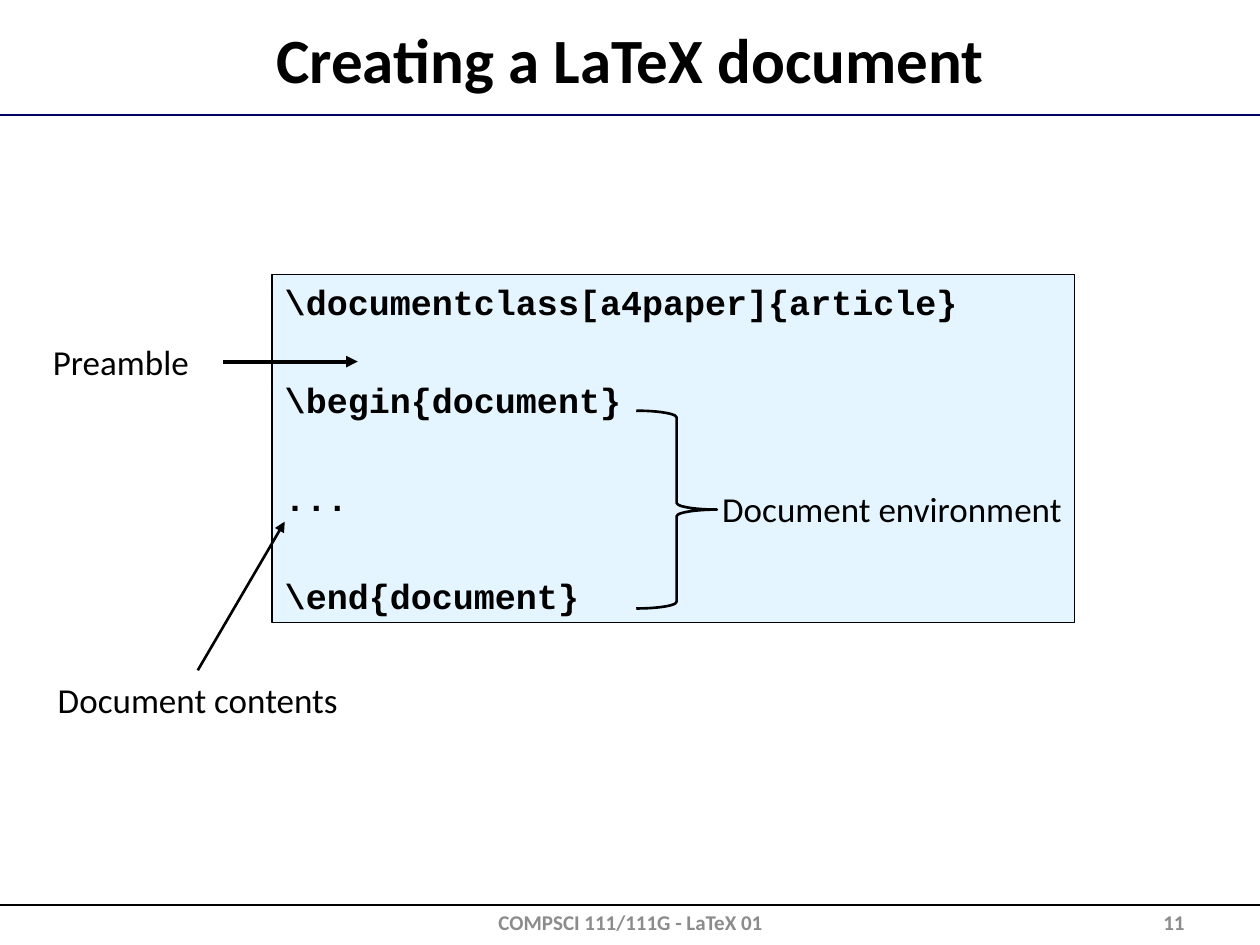
import pptx
import pptx.util
import pptx.dml.color
import pptx.enum.shapes
import pptx.enum.text
import pptx.oxml.ns
from lxml import etree

Inches = pptx.util.Inches
Pt = pptx.util.Pt
RGBColor = pptx.dml.color.RGBColor
ALIGN = pptx.enum.text.PP_ALIGN
MIDDLE = pptx.enum.text.MSO_ANCHOR.MIDDLE
SHAPE = pptx.enum.shapes.MSO_SHAPE

BLACK = RGBColor(0, 0, 0)
NAVY = RGBColor(0x00, 0x00, 0x66)
GREY = RGBColor(0x8C, 0x8C, 0x8C)
PALE_BLUE = RGBColor(0xE5, 0xF5, 0xFF)

CODE_LINES = (
    "\\documentclass[a4paper]{article}",
    "\\begin{document}",
    "...",
    "\\end{document}",
)


def add_xml_child(parent, tag, **attributes):
    return etree.SubElement(parent, pptx.oxml.ns.qn(tag), attributes)


def place(shape, left, top, width, height):
    shape.left, shape.top = Inches(left), Inches(top)
    shape.width, shape.height = Inches(width), Inches(height)


def style_paragraph(paragraph, size, font="Calibri", color=BLACK, bold=False,
                    alignment=ALIGN.CENTER):
    paragraph.alignment = alignment
    paragraph.font.name = font
    paragraph.font.size = Pt(size)
    paragraph.font.bold = bold
    paragraph.font.color.rgb = color


def set_title(slide, text):
    title = slide.shapes.title
    place(title, 0.1, 0.12, 9.8, 0.69)
    title.text_frame.text = text
    title.text_frame.vertical_anchor = MIDDLE
    style_paragraph(title.text_frame.paragraphs[0], 36, bold=True)


def set_code(slide, lines):
    body = slide.placeholders[1]
    place(body, 2.16, 2.18, 6.37, 2.76)
    body.fill.solid()
    body.fill.fore_color.rgb = PALE_BLUE
    body.line.color.rgb = BLACK
    body.line.width = Pt(0.75)
    frame = body.text_frame
    frame.text = "\n".join(lines)
    frame.auto_size = pptx.enum.text.MSO_AUTO_SIZE.NONE
    frame.vertical_anchor = pptx.enum.text.MSO_ANCHOR.TOP
    for index, paragraph in enumerate(frame.paragraphs):
        style_paragraph(paragraph, 20, "Courier New", bold=True,
                        alignment=ALIGN.LEFT)
        paragraph.space_before = Pt(31.8 if index else 4)
        properties = paragraph._p.get_or_add_pPr()
        properties.set("marL", "0")
        properties.set("indent", "0")
        add_xml_child(properties, "a:buNone")


def add_unfilled_shape(slide, kind, box):
    shape = slide.shapes.add_shape(kind, *map(Inches, box))
    shape.shadow.inherit = False
    shape.fill.background()
    return shape


def add_label(slide, text, box, size=20, wrap=False, **style):
    label = add_unfilled_shape(slide, SHAPE.RECTANGLE, box)
    label.line.fill.background()
    frame = label.text_frame
    frame.text = text
    frame.word_wrap = wrap
    frame.vertical_anchor = MIDDLE
    style_paragraph(frame.paragraphs[0], size, **style)


def add_line(slide, start, end, width, color=BLACK, arrow=False):
    line = slide.shapes.add_connector(
        pptx.enum.shapes.MSO_CONNECTOR.STRAIGHT,
        *map(Inches, start + end))
    line.line.color.rgb = color
    line.line.width = Pt(width)
    if arrow:
        add_xml_child(line.line._get_or_add_ln(), "a:tailEnd", type="triangle")
    add_xml_child(line._element.spPr, "a:effectLst")


def add_right_brace(slide, box):
    brace = add_unfilled_shape(slide, SHAPE.RIGHT_BRACE, box)
    brace.line.color.rgb = BLACK
    brace.line.width = Pt(1.5)


def main():
    presentation = pptx.Presentation()
    presentation.slide_width = Inches(10)
    presentation.slide_height = Inches(7.5)
    slide = presentation.slides.add_slide(presentation.slide_layouts[1])

    add_line(slide, (0, 0.91), (10, 0.91), 1, NAVY)
    add_line(slide, (0, 7.18), (10, 7.18), 1)
    set_title(slide, "Creating a LaTeX document")
    add_label(slide, "COMPSCI 111/111G - LaTeX 01", (3.42, 7.18, 3.17, 0.27),
              size=12, wrap=True, color=GREY, bold=True)
    add_label(slide, "11", (7.17, 7.18, 2.33, 0.27), size=12, wrap=True,
              color=GREY, bold=True, alignment=ALIGN.RIGHT)

    set_code(slide, CODE_LINES)
    add_line(slide, (1.77, 2.87), (2.84, 2.87), 2.25, arrow=True)
    add_label(slide, "Preamble", (0.46, 2.37, 1, 1))
    add_right_brace(slide, (5.05, 3.26, 0.64, 1.57))
    add_label(slide, "Document environment", (5.71, 3.74, 2.74, 0.59))
    add_line(slide, (1.57, 5.32), (2.26, 4.14), 1.5, arrow=True)
    add_label(slide, "Document contents", (1.07, 5.05, 1, 1))

    presentation.save("out.pptx")


if __name__ == "__main__":
    main()
